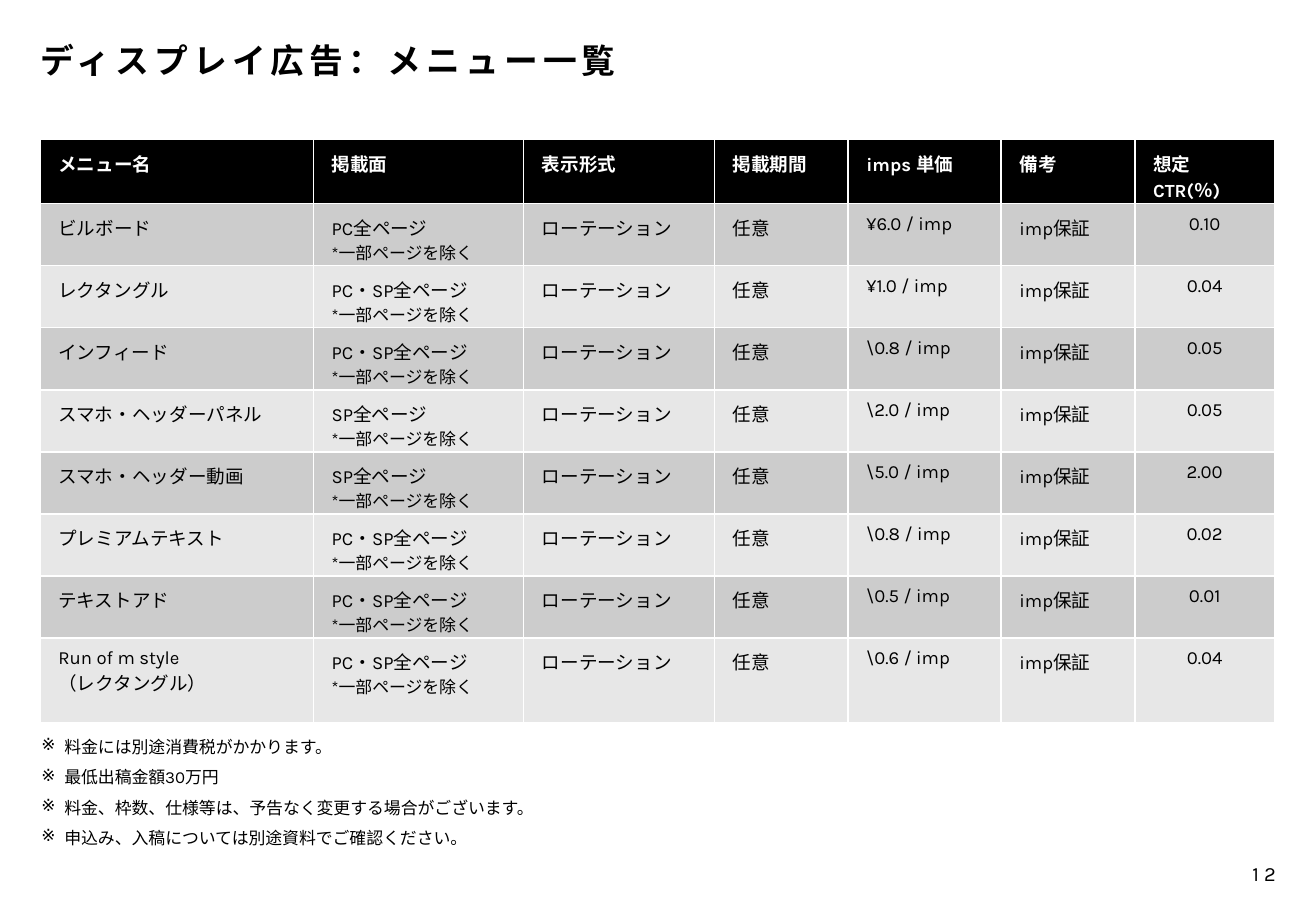
from lxml import etree
from pptx import Presentation
from pptx.dml.color import RGBColor
from pptx.enum.text import MSO_ANCHOR, MSO_AUTO_SIZE, PP_ALIGN
from pptx.oxml.ns import qn
from pptx.util import Inches, Pt

LEFT, CENTER, RIGHT = PP_ALIGN.LEFT, PP_ALIGN.CENTER, PP_ALIGN.RIGHT
TOP, MIDDLE, BOTTOM = MSO_ANCHOR.TOP, MSO_ANCHOR.MIDDLE, MSO_ANCHOR.BOTTOM
FIXED, GROW = MSO_AUTO_SIZE.NONE, MSO_AUTO_SIZE.SHAPE_TO_FIT_TEXT
TITLE_ONLY = 5

FONT = "Karla"
BLACK, WHITE = "000000", "FFFFFF"
BANDS = ("CCCCCC", "E7E7E7")

COLUMN_WIDTHS = (2.25, 1.73, 1.57, 1.1, 1.26, 1.1, 1.15)
ROW_HEIGHTS = (0.45, *[0.49] * 7, 0.7)
HEADINGS = ("メニュー名", "掲載面", "表示形式", "掲載期間", "imps 単価", "備考", "想定CTR(％)")
BOTH_PAGES = "PC・SP全ページ"
MENUS = (
    ("ビルボード", "PC全ページ", "¥6.0", "0.10"),
    ("レクタングル", BOTH_PAGES, "¥1.0", "0.04"),
    ("インフィード", BOTH_PAGES, "\\0.8", "0.05"),
    ("スマホ・ヘッダーパネル", "SP全ページ", "\\2.0", "0.05"),
    ("スマホ・ヘッダー動画", "SP全ページ", "\\5.0", "2.00"),
    ("プレミアムテキスト", BOTH_PAGES, "\\0.8", "0.02"),
    ("テキストアド", BOTH_PAGES, "\\0.5", "0.01"),
    ("Run of m style\n（レクタングル）", BOTH_PAGES, "\\0.6", "0.04"),
)
NOTES = (
    "料金には別途消費税がかかります。",
    "最低出稿金額30万円",
    "料金、枠数、仕様等は、予告なく変更する場合がございます。",
    "申込み、入稿については別途資料でご確認ください。",
)


def color(value):
    return RGBColor.from_string(value)


def assign(target, values):
    for name, value in values.items():
        setattr(target, name, value)


def write_lines(frame, lines, sizes, ink=BLACK, bold=False, tracking=0, **para_format):
    for index, (line, size) in enumerate(zip(lines, sizes)):
        para = frame.paragraphs[0] if index == 0 else frame.add_paragraph()
        assign(para, para_format)
        span = para.add_run()
        span.text = line
        assign(span.font, {"name": FONT, "size": Pt(size), "bold": bold})
        span.font.color.rgb = color(ink)
        if tracking:
            span.font._element.set("spc", str(tracking * 100))


def set_frame(frame, anchor, auto_size=FIXED):
    assign(frame, {"word_wrap": True, "auto_size": auto_size, "vertical_anchor": anchor,
                   "margin_left": 0, "margin_top": 0, "margin_right": 0, "margin_bottom": 0})


def add_text_box(page, box, anchor, auto_size=FIXED):
    frame = page.shapes.add_textbox(*map(Inches, box)).text_frame
    set_frame(frame, anchor, auto_size)
    return frame


def place_title(page, box):
    title = page.shapes.title
    assign(title, dict(zip(("left", "top", "width", "height"), map(Inches, box))))
    set_frame(title.text_frame, MIDDLE)
    write_lines(title.text_frame, ["ディスプレイ広告：メニュー一覧"], [20],
                bold=True, tracking=3, alignment=LEFT, line_spacing=0.9)


def fill_cell(cell, fill, lines, sizes, **text_format):
    assign(cell, {"margin_left": Inches(0.15), "margin_right": Inches(0.15),
                  "margin_top": Inches(0.08), "margin_bottom": Inches(0.08),
                  "vertical_anchor": TOP})
    cell.fill.solid()
    cell.fill.fore_color.rgb = color(fill)
    write_lines(cell.text_frame, lines, sizes, **text_format)


def add_menu_table(page, box):
    table = page.shapes.add_table(
        len(ROW_HEIGHTS), len(COLUMN_WIDTHS), *map(Inches, box)).table
    for column, width in zip(table.columns, COLUMN_WIDTHS):
        column.width = Inches(width)
    for row, height in zip(table.rows, ROW_HEIGHTS):
        row.height = Inches(height)
    for column, heading in enumerate(HEADINGS):
        fill_cell(table.cell(0, column), BLACK, [heading], [11], ink=WHITE, bold=True)
    for row, (name, pages, price, rate) in enumerate(MENUS, 1):
        fill = BANDS[(row - 1) % 2]
        values = (name, f"{pages}\n*一部ページを除く", "ローテーション", "任意",
                  f"{price} / imp", "imp保証", rate)
        for column, value in enumerate(values):
            sizes = (11, 10) if column == 1 else (11, 11)
            alignment = CENTER if column == len(values) - 1 else LEFT
            fill_cell(table.cell(row, column), fill, value.split("\n"), sizes,
                      alignment=alignment)


def add_notes(page, box):
    frame = add_text_box(page, box, TOP, GROW)
    write_lines(frame, NOTES, [10] * len(NOTES), line_spacing=1.5)
    indent = Inches(0.19)
    for para in frame.paragraphs:
        properties = para._p.get_or_add_pPr()
        properties.set("marL", str(indent))
        properties.set("indent", str(-indent))
        etree.SubElement(properties, qn("a:buChar"), char="※")


def add_page_number(page, box):
    frame = add_text_box(page, box, BOTTOM)
    write_lines(frame, ["12"], [12], tracking=3, alignment=RIGHT)


def main():
    deck = Presentation()
    deck.slide_width, deck.slide_height = Inches(10.83), Inches(7.5)
    page = deck.slides.add_slide(deck.slide_layouts[TITLE_ONLY])
    place_title(page, (0.33, 0.29, 8.32, 0.45))
    add_page_number(page, (7.65, 6.94, 2.85, 0.35))
    add_notes(page, (0.34, 5.98, 10.17, 0.98))
    add_menu_table(page, (0.33, 1.15, sum(COLUMN_WIDTHS), sum(ROW_HEIGHTS)))
    deck.save("out.pptx")


if __name__ == "__main__":
    main()
